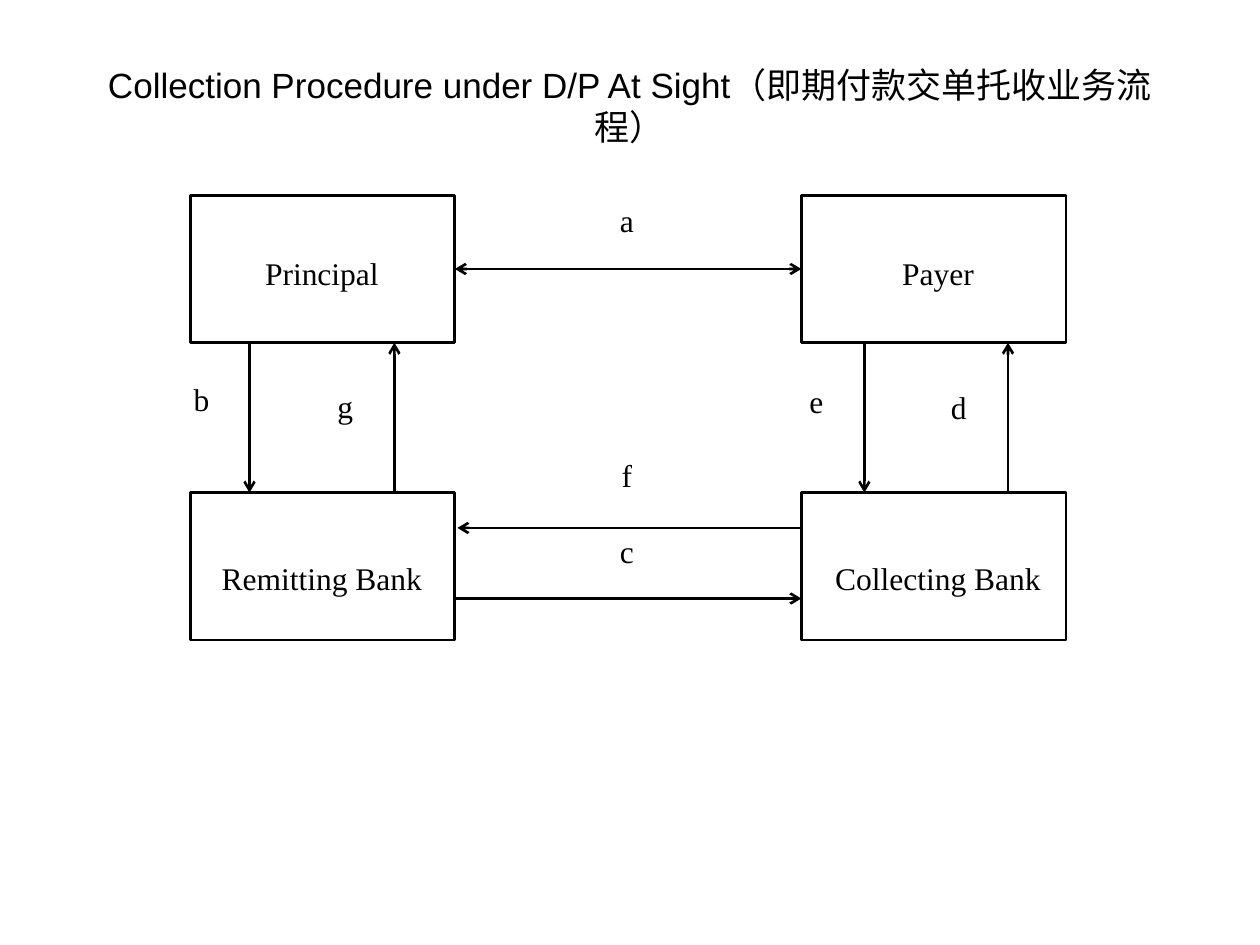
from pptx import Presentation
from pptx.dml.color import RGBColor
from pptx.enum.shapes import MSO_CONNECTOR as Line, MSO_SHAPE as Shape
from pptx.enum.text import MSO_ANCHOR as Anchor, PP_ALIGN as Align
from pptx.oxml.ns import qn
from pptx.util import Inches, Pt
from lxml.etree import SubElement

COLORS = {"ink": "000000", "paper": "FFFFFF"}
SERIF = "Times New Roman"
LEFT, RIGHT, TOP, LOW = 1.51, 6.36, 1.55, 3.91
WIDE, HIGH = 2.1, 1.17


def color(name):
    """Return the named colour."""
    return RGBColor.from_string(COLORS[name])


def add_text(slide, text, box, size=18, font=SERIF, anchor=Anchor.TOP, inset=None):
    """Place centred text in the given box."""
    shape = slide.shapes.add_textbox(*map(Inches, box))
    frame = shape.text_frame
    frame.word_wrap = True
    frame.vertical_anchor = anchor
    if inset is not None:
        frame.margin_left = frame.margin_right = Inches(inset)
        frame.margin_top = frame.margin_bottom = Inches(inset)
    frame.text = text
    para = frame.paragraphs[0]
    para.alignment = Align.CENTER
    face = para.runs[0].font
    face.size, face.name = Pt(size), font
    face.color.rgb = color("ink")


def add_party(slide, name, box, shift):
    """Draw a party's rectangle and its name, and return the rectangle."""
    rect = slide.shapes.add_shape(Shape.RECTANGLE, *map(Inches, box))
    rect.shadow.inherit = False
    rect.fill.background()
    rect.line.color.rgb = color("ink")
    rect.line.width = Pt(1.5)
    left, top = box[0] + shift[0], box[1] + shift[1]
    add_text(slide, name, (left, top, 1.87, 0.5), anchor=Anchor.MIDDLE, inset=0)
    return rect


def add_arrow(slide, ends, both=False):
    """Draw an arrow along the given ends, with a head at one or both."""
    arrow = slide.shapes.add_connector(Line.STRAIGHT, *map(Inches, ends))
    arrow.line.color.rgb = color("ink")
    arrow.line.width = Pt(1.5)
    line = arrow.line._get_or_add_ln()
    for tag in ("a:headEnd", "a:tailEnd") if both else ("a:tailEnd",):
        SubElement(line, qn(tag), type="arrow")
    SubElement(arrow._element.spPr, qn("a:effectLst"))
    return arrow


def add_flow(slide, box):
    """Draw the four parties, and the lettered steps between them."""
    left, top, width, height = box
    right, low = left + width - WIDE, top + height - HIGH
    edge, base, mid = left + WIDE, top + HIGH, top + HIGH / 2
    parties = [
        add_party(slide, name, (x, y, WIDE, HIGH), shift)
        for name, x, y, shift in (
            ("Principal", left, top, (0.11, 0.37)),
            ("Payer", right, top, (0.15, 0.37)),
            ("Remitting Bank", left, low, (0.11, 0.43)),
            ("Collecting Bank", right, low, (0.15, 0.43)),
        )
    ]
    deal = add_arrow(slide, (edge, mid, right, mid), both=True)
    deal.begin_connect(parties[0], 3)
    deal.end_connect(parties[1], 1)
    for ends in (
        (right, low + 0.28, edge + 0.02, low + 0.28),
        (edge, low + 0.84, right, low + 0.84),
        (left + 0.47, base, left + 0.47, low),
        (left + 1.62, low, left + 1.62, base),
        (right + 0.5, base, right + 0.5, low),
        (right + 1.64, low, right + 1.64, base),
    ):
        add_arrow(slide, ends)
    center = (edge + right) / 2 - 0.39
    for step, x, y in (
        ("a", center, top),
        ("f", center, top + 2.02),
        ("c", center, top + 2.62),
        ("b", left - 0.29, top + 1.42),
        ("g", left + 0.85, top + 1.47),
        ("e", right - 0.26, top + 1.43),
        ("d", right + 0.87, top + 1.48),
    ):
        add_text(slide, step, (x, y, 0.76, 0.63))


def main():
    """Build and save the slide."""
    deck = Presentation()
    deck.slide_width, deck.slide_height = Inches(10), Inches(7.5)
    slide = deck.slides.add_slide(deck.slide_layouts[6])
    slide.background.fill.solid()
    slide.background.fill.fore_color.rgb = color("paper")
    title = "Collection Procedure under D/P At Sight（即期付款交单托收业务流程）"
    add_text(slide, title, (0.5, 0.21, 9, 1.25), 20, "Arial", Anchor.MIDDLE)
    add_flow(slide, (LEFT, TOP, RIGHT + WIDE - LEFT, LOW + HIGH - TOP))
    deck.save("out.pptx")


if __name__ == "__main__":
    main()
